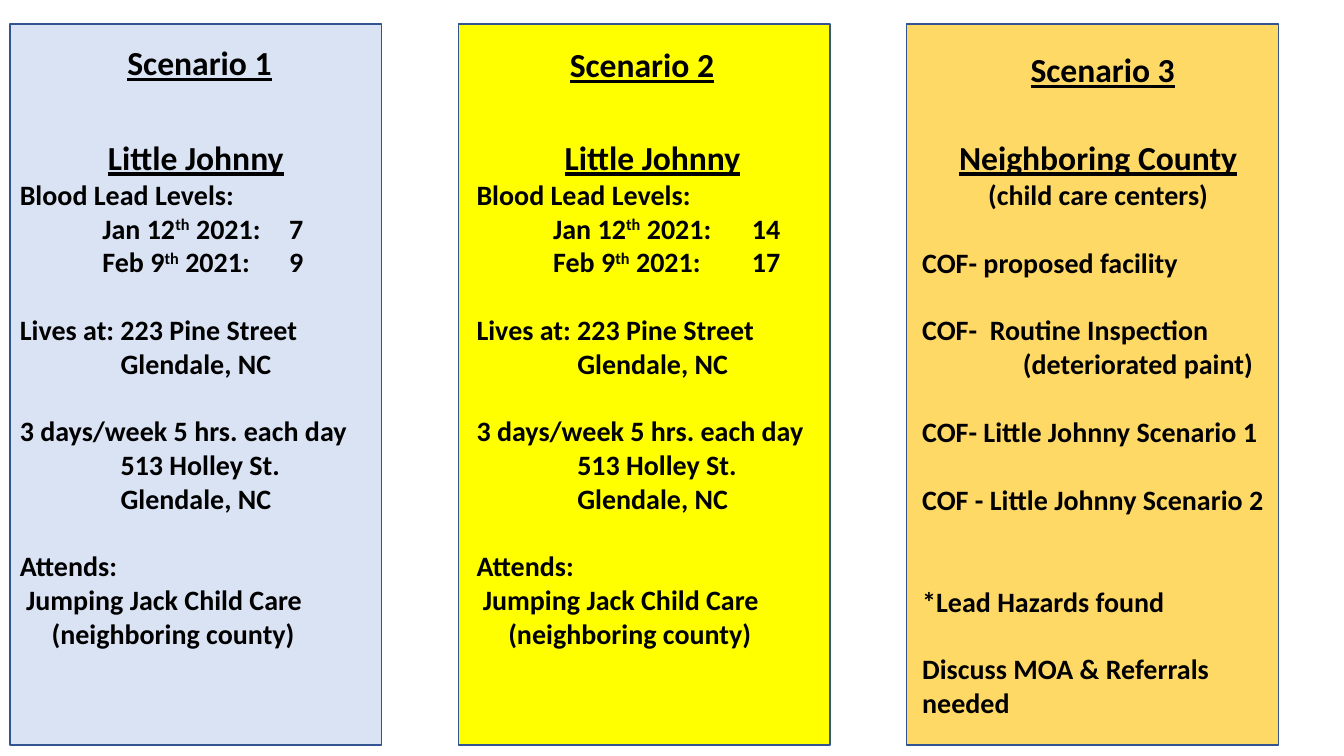
from lxml.etree import SubElement
from pptx import Presentation
from pptx.dml.color import RGBColor
from pptx.enum.shapes import MSO_SHAPE
from pptx.enum.text import PP_ALIGN
from pptx.oxml.ns import qn
from pptx.util import Cm, Pt

FONT = "Calibri"
BLACK = "000000"
OUTLINE = "325491"
PANEL_TOP, PANEL_WIDTH, PANEL_HEIGHT = 0.61, 9.37, 18.16
PANEL_LEFT, PANEL_STEP = 0.25, 11.3
PANEL_FILLS = ["DAE3F3", "FFFF00", "FFD966"]
BODY_TOP = 3.33
ADDRESS_INDENT = 2.54
LINE_HEIGHT = 24.4


def colour(value):
    """Turn a hex string into a colour."""
    return RGBColor.from_string(value)


def add_panel(page, left, fill):
    """Draw one scenario's coloured background."""
    panel = page.shapes.add_shape(
        MSO_SHAPE.RECTANGLE, Cm(left), Cm(PANEL_TOP), Cm(PANEL_WIDTH), Cm(PANEL_HEIGHT)
    )
    panel.shadow.inherit = False
    panel.fill.solid()
    panel.fill.fore_color.rgb = colour(fill)
    panel.line.color.rgb = colour(OUTLINE)
    panel.line.width = Pt(1)


def add_box(page, left, top, width, height):
    """Add a wrapping text box and return its text frame."""
    box = page.shapes.add_textbox(Cm(left), Cm(top), Cm(width), Cm(height))
    box.text_frame.word_wrap = True
    return box.text_frame


def style(para, size, centred=False, underlined=False):
    """Set a paragraph's font and alignment."""
    para.font.name = FONT
    para.font.size = Pt(size)
    para.font.bold = True
    para.font.underline = underlined
    para.font.color.rgb = colour(BLACK)
    para.alignment = PP_ALIGN.CENTER if centred else PP_ALIGN.LEFT


def add_heading(frame, text):
    """Write an underlined heading in the first paragraph."""
    para = frame.paragraphs[0]
    para.text = text
    style(para, 24, centred=True, underlined=True)


def add_line(frame, text, indent=0, lines_before=0, centred=False):
    """Append a body line, indented in cm and spaced in line heights."""
    para = frame.add_paragraph()
    para.text = text
    style(para, 20, centred)
    para.space_before = Pt(lines_before * LINE_HEIGHT)
    para._p.get_or_add_pPr().set("marL", str(Cm(indent)))
    return para


def add_reading(frame, day, level, indent, level_at):
    """Append a dated blood level with a raised ordinal and a tab stop."""
    para = add_line(frame, day, indent)
    ordinal = para.add_run()
    ordinal.text = "th"
    ordinal.font._element.set("baseline", "30000")
    para.add_run().text = f" 2021:\t{level}"
    stops = para._p.get_or_add_pPr().find(qn("a:tabLst"))
    if stops is None:
        stops = SubElement(para._p.pPr, qn("a:tabLst"))
        para._p.pPr.insert_element_before(stops, "a:defRPr", "a:extLst")
    SubElement(stops, qn("a:tab"), pos=str(Cm(level_at)), algn="l")


def add_johnny(page, left, levels, indent, level_at):
    """Write a Little Johnny scenario with its two blood levels."""
    frame = add_box(page, left, BODY_TOP, PANEL_WIDTH, 14.1)
    add_heading(frame, "Little Johnny")
    add_line(frame, "Blood Lead Levels:")
    for day, level in zip(["Jan 12", "Feb 9"], levels):
        add_reading(frame, day, level, indent, level_at)
    add_line(frame, "Lives at: 223 Pine Street", lines_before=1)
    add_line(frame, "Glendale, NC", ADDRESS_INDENT)
    add_line(frame, "3 days/week 5 hrs. each day", lines_before=1)
    add_line(frame, "513 Holley St.", ADDRESS_INDENT)
    add_line(frame, "Glendale, NC", ADDRESS_INDENT)
    add_line(frame, "Attends:", lines_before=1)
    add_line(frame, "Jumping Jack Child Care", 0.16)
    add_line(frame, "(neighboring county)", 0.8)


def add_county(page, left):
    """Write the neighboring county scenario."""
    frame = add_box(page, left, BODY_TOP, PANEL_WIDTH, 15.4)
    add_heading(frame, "Neighboring County")
    add_line(frame, "(child care centers)", centred=True)
    add_line(frame, "COF- proposed facility", lines_before=1)
    add_line(frame, "COF-  Routine Inspection", lines_before=1)
    add_line(frame, "(deteriorated paint)", ADDRESS_INDENT)
    add_line(frame, "COF- Little Johnny Scenario 1", lines_before=1)
    add_line(frame, "COF - Little Johnny Scenario 2", lines_before=1)
    add_line(frame, "*Lead Hazards found", lines_before=2)
    add_line(frame, "Discuss MOA & Referrals needed", lines_before=1)


def main():
    """Build the three-scenario slide."""
    deck = Presentation()
    deck.slide_width, deck.slide_height = Cm(33.87), Cm(19.05)
    page = deck.slides.add_slide(deck.slide_layouts[6])
    for index, fill in enumerate(PANEL_FILLS):
        add_panel(page, PANEL_LEFT + index * PANEL_STEP, fill)
    titles = [(0.79, 0.94), (11.94, 0.99), (23.55, 1.12)]
    for number, (left, top) in enumerate(titles, start=1):
        add_heading(add_box(page, left, top, 8.48, 1.27), f"Scenario {number}")
    add_johnny(page, 0.25, [7, 9], indent=2.08, level_at=6.43)
    add_johnny(page, 11.76, [14, 17], indent=1.93, level_at=6.25)
    add_county(page, 22.99)
    deck.save("out.pptx")


if __name__ == "__main__":
    main()
